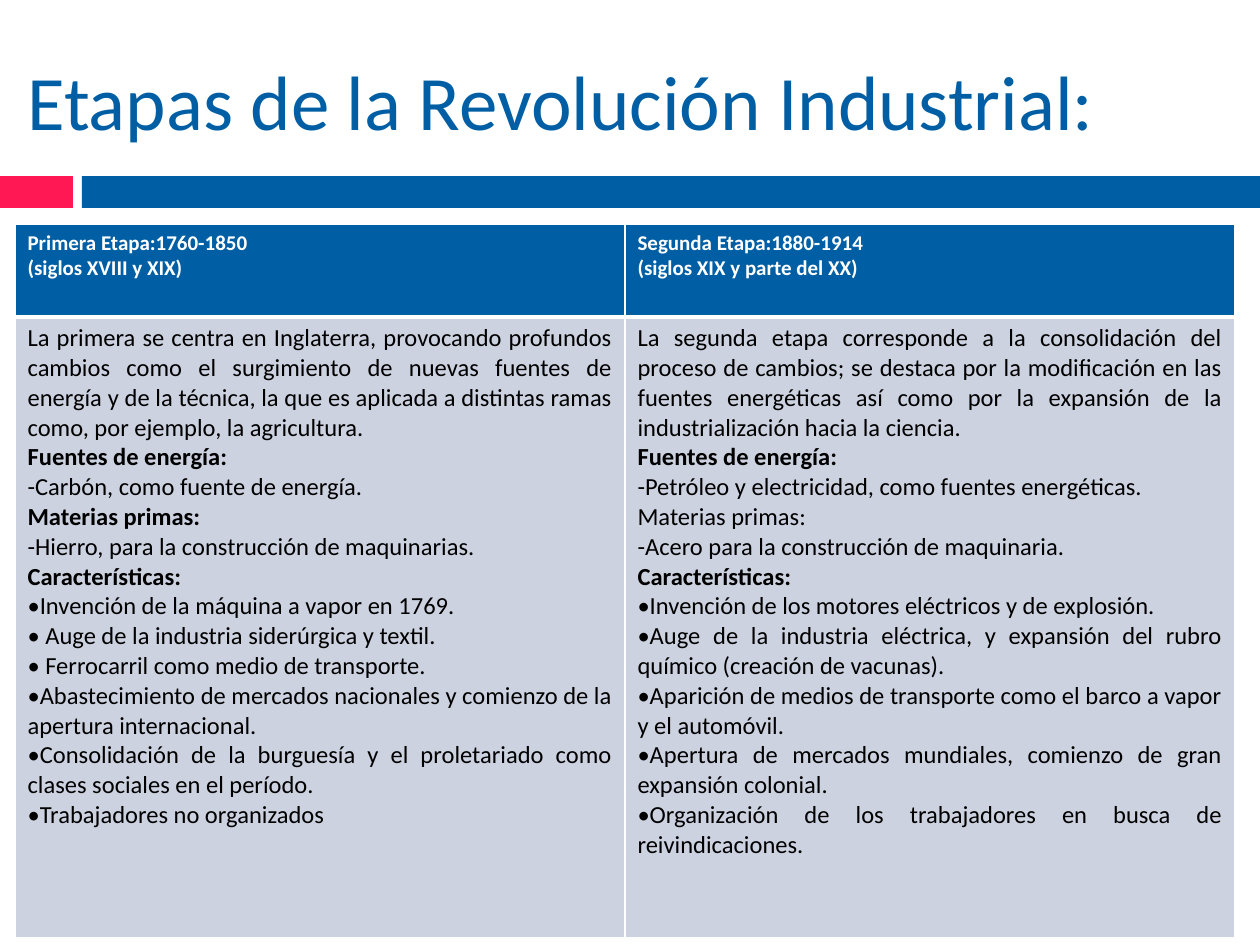
"""Build a slide comparing the two stages of the Industrial Revolution."""
from lxml import etree
from pptx import Presentation
from pptx.dml.color import RGBColor
from pptx.enum.shapes import MSO_SHAPE
from pptx.enum.text import MSO_ANCHOR, PP_ALIGN
from pptx.oxml.ns import qn
from pptx.util import Emu, Pt

RECT = MSO_SHAPE.RECTANGLE
MIDDLE = MSO_ANCHOR.MIDDLE
LEFT, JUST = PP_ALIGN.LEFT, PP_ALIGN.JUSTIFY
SCALE = 914400 / 126
HEX = {"blue": "005FA4", "red": "FF1854", "pale": "CCD2E0",
       "white": "FFFFFF", "black": "000000"}
RGB = {name: RGBColor.from_string(code) for name, code in HEX.items()}

HEADS = [
    ["Primera Etapa:1760-1850", "(siglos XVIII y XIX)"],
    ["Segunda Etapa:1880-1914", "(siglos XIX y parte del XX)"],
]
STAGES = [
    [
        "La primera se centra en Inglaterra, provocando profundos cambios como el "
        "surgimiento de nuevas fuentes de energía y de la técnica, la que es aplicada "
        "a distintas ramas como, por ejemplo, la agricultura.",
        "Fuentes de energía:",
        "-Carbón, como fuente de energía.",
        "Materias primas:",
        "-Hierro, para la construcción de maquinarias.",
        "Características:",
        "•Invención de la máquina a vapor en 1769.",
        "• Auge de la industria siderúrgica y textil.",
        "• Ferrocarril como medio de transporte.",
        "•Abastecimiento de mercados nacionales y comienzo de la apertura internacional.",
        "•Consolidación de la burguesía y el proletariado como clases sociales en el período.",
        "•Trabajadores no organizados",
    ],
    [
        "La segunda etapa corresponde a la consolidación del proceso de cambios; se "
        "destaca por la modificación en las fuentes energéticas así como por la "
        "expansión de la industrialización hacia la ciencia.",
        "Fuentes de energía:",
        "-Petróleo y electricidad, como fuentes energéticas.",
        "Materias primas:",
        "-Acero para la construcción de maquinaria.",
        "Características:",
        "•Invención de los motores eléctricos y de explosión.",
        "•Auge de la industria eléctrica, y expansión del rubro químico (creación de vacunas).",
        "•Aparición de medios de transporte como el barco a vapor y el automóvil.",
        "•Apertura de mercados mundiales, comienzo de gran expansión colonial.",
        "•Organización de los trabajadores en busca de reivindicaciones.",
    ],
]
BOLD = [{1, 3, 5}, {1, 5}]


def px(*sizes):
    return [Emu(round(size * SCALE)) for size in sizes]


def write(frame, lines, size, color, bold, align):
    for i, line in enumerate(lines):
        para = frame.paragraphs[0] if i == 0 else frame.add_paragraph()
        para.alignment = align
        run = para.add_run()
        run.text = line
        run.font.name = "Calibri"
        run.font.size = Pt(size)
        run.font.bold = i in bold
        run.font.color.rgb = RGB[color]


deck = Presentation()
deck.slide_width, deck.slide_height = px(1260, 945)
slide = deck.slides.add_slide(deck.slide_layouts[6])

for left, width, color in [(0, 73, "red"), (82, 1178, "blue")]:
    bar = slide.shapes.add_shape(RECT, *px(left, 176, width, 32))
    bar.shadow.inherit = False
    bar.fill.solid()
    bar.fill.fore_color.rgb = RGB[color]
    bar.line.fill.background()

title = slide.shapes.add_textbox(*px(15, 32, 1221, 136)).text_frame
title.word_wrap = True
title.vertical_anchor = MIDDLE
write(title, ["Etapas de la Revolución Industrial:"], 44, "blue", set(), LEFT)

table = slide.shapes.add_table(2, 2, *px(15, 224, 1220, 714)).table
for col in table.columns:
    col.width = px(610)[0]
for row, height in zip(table.rows, [93, 621]):
    row.height = px(height)[0]

rows = [
    (HEADS, 12, "white", [{0, 1}] * 2, LEFT, "blue", (1, 1, 1, 3)),
    (STAGES, 14, "black", BOLD, JUST, "pale", (1, 1, 3, 1)),
]
for r, (texts, size, color, bolds, align, back, lines) in enumerate(rows):
    for c, text in enumerate(texts):
        cell = table.cell(r, c)
        write(cell.text_frame, text, size, color, bolds[c], align)
        props = cell._tc.get_or_add_tcPr()
        for side, width in zip("LRTB", lines):
            edge = etree.SubElement(props, qn(f"a:ln{side}"), w=str(Pt(width)))
            paint = etree.SubElement(edge, qn("a:solidFill"))
            etree.SubElement(paint, qn("a:srgbClr"), val=HEX["white"])
        cell.fill.solid()
        cell.fill.fore_color.rgb = RGB[back]

deck.save("out.pptx")
